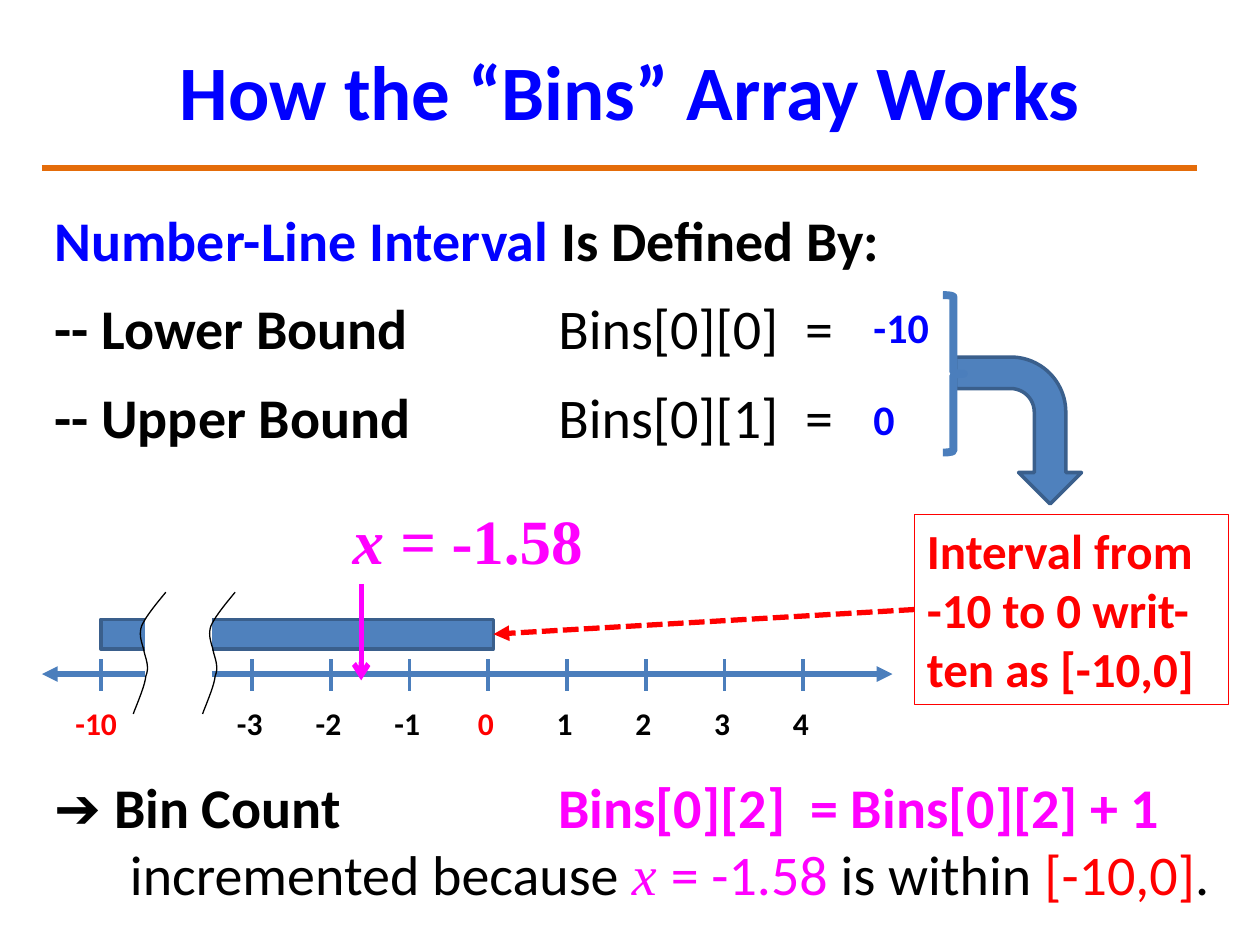
from lxml import etree
from pptx import Presentation
from pptx.dml.color import RGBColor
from pptx.enum.dml import MSO_LINE
from pptx.enum.shapes import MSO_CONNECTOR, MSO_SHAPE
from pptx.enum.text import MSO_ANCHOR, PP_ALIGN
from pptx.oxml.ns import qn
from pptx.util import Inches, Pt

STRAIGHT, DASH = MSO_CONNECTOR.STRAIGHT, MSO_LINE.SQUARE_DOT
RECT, BENT, BRACE = MSO_SHAPE.RECTANGLE, MSO_SHAPE.BENT_ARROW, MSO_SHAPE.RIGHT_BRACE
MIDDLE, TOP = MSO_ANCHOR.MIDDLE, MSO_ANCHOR.TOP
CENTER, LEFT = PP_ALIGN.CENTER, PP_ALIGN.LEFT
BLUE = RGBColor(0x00, 0x00, 0xFF)
RED = RGBColor(0xFF, 0x00, 0x00)
MAGENTA = RGBColor(0xFF, 0x00, 0xFF)
BLACK = RGBColor(0x00, 0x00, 0x00)
WHITE = RGBColor(0xFF, 0xFF, 0xFF)
ORANGE = RGBColor(0xE4, 0x6C, 0x0A)
STEEL = RGBColor(0x4F, 0x81, 0xBD)
STEEL_DARK = RGBColor(0x3A, 0x5F, 0x8C)
STEEL_LINE = RGBColor(0x4B, 0x7E, 0xBC)
SANS, SERIF = "Calibri", "Times New Roman"
COLS, ROWS = 120, 90


class Deck:
    """Draws styled elements on a slide divided into columns and rows."""

    def __init__(self, prs):
        self.slide = prs.slides.add_slide(prs.slide_layouts[6])
        self.shapes = self.slide.shapes
        self.col, self.row = prs.slide_width / COLS, prs.slide_height / ROWS

    def xy(self, x, y):
        return round(x * self.col), round(y * self.row)

    def put_text(self, sp, paragraphs, size, anchor=TOP, align=LEFT, before=0, tabs=()):
        tf = sp.text_frame
        tf.word_wrap, tf.vertical_anchor = True, anchor
        for i, runs in enumerate(paragraphs):
            p = tf.add_paragraph() if i else tf.paragraphs[0]
            p.alignment = align
            if i and before:
                p.space_before = Pt(before)
            if tabs:
                tab_list = etree.SubElement(p._p.get_or_add_pPr(), qn("a:tabLst"))
                for pos, kind in tabs:
                    etree.SubElement(tab_list, qn("a:tab"), pos=str(round(pos * self.col)), algn=kind)
            for text, color, bold, *serif in runs:
                r = p.add_run()
                r.text = text
                r.font.size, r.font.bold, r.font.color.rgb = Pt(size), bold, color
                r.font.name = SERIF if serif else SANS
                r.font.italic = "italic" in serif
        return tf

    def text(self, box, paragraphs, size, **style):
        sp = self.shapes.add_textbox(*self.xy(*box[:2]), *self.xy(*box[2:]))
        return self.put_text(sp, paragraphs, size, **style)

    def shape(self, kind, box, fill, color, width, rotation=0):
        sp = self.shapes.add_shape(kind, *self.xy(*box[:2]), *self.xy(*box[2:]))
        sp.rotation = rotation
        return self.paint(sp, fill, color, width)

    def paint(self, sp, fill, color, width):
        sp.shadow.inherit = False
        if fill is None:
            sp.fill.background()
        else:
            sp.fill.solid()
            sp.fill.fore_color.rgb = fill
        sp.line.color.rgb, sp.line.width = color, Pt(width)
        return sp

    def line(self, start, end, color, width, head=None, tail=None, dash=None):
        c = self.shapes.add_connector(STRAIGHT, *self.xy(*start), *self.xy(*end))
        c.line.color.rgb, c.line.width = color, Pt(width)
        if dash:
            c.line.dash_style = dash
        ln = c._element.spPr.find(qn("a:ln"))
        for tag, kind in (("a:headEnd", head), ("a:tailEnd", tail)):
            if kind:
                etree.SubElement(ln, qn(tag), type=kind)
        etree.SubElement(c._element.spPr, qn("a:effectLst"))
        return c

    def curve(self, origin, start, beziers, color, width, steps=10):
        points, p0 = [start], start
        for p1, p2, p3 in beziers:
            for t in (i / steps for i in range(1, steps + 1)):
                u = 1 - t
                points.append(tuple(u**3 * a + 3 * u * u * t * b + 3 * u * t * t * c + t**3 * d
                                    for a, b, c, d in zip(p0, p1, p2, p3)))
            p0 = p3
        points = [self.xy(origin[0] + x, origin[1] + y) for x, y in points]
        builder = self.shapes.build_freeform(*points[0])
        builder.add_line_segments(points[1:], close=False)
        return self.paint(builder.convert_to_shape(), None, color, width)


def main():
    prs = Presentation()
    prs.slide_width, prs.slide_height = Inches(10), Inches(7.5)
    s = Deck(prs)
    s.text((6, 1, 108, 15), [[("How the “Bins” Array Works", BLUE, True)]], 44,
           anchor=MIDDLE, align=CENTER)
    s.line((4, 16), (114, 16), ORANGE, 3)

    columns = [(48, "l"), (71.5, "l")]
    bounds = [[(f"-- {name} Bound", BLACK, True), (f"\tBins[0][{i}]\t=", BLACK, False)]
              for i, name in enumerate(("Lower", "Upper"))]
    s.text((4, 19, 110, 24.6),
           [[("Number-Line Interval ", BLUE, True), ("Is Defined By:", BLACK, True)], *bounds],
           32, before=12, tabs=columns)

    ticks = [24 + 7.5 * i for i in range(8)]
    labels = [("-10", RED, True)]
    labels += [(f"\t{n}", BLACK if n else RED, True) for n in range(-3, 5)]
    s.text((6, 66.5, 76, 4.8), [labels], 18, tabs=[(x - 7.4, "ctr") for x in ticks])
    s.line((4, 64.2), (85, 64.2), STEEL_LINE, 3, head="triangle", tail="triangle")
    for x in [9.6, *ticks]:
        s.line((x, 65.8), (x, 62.8), STEEL_LINE, 2.25)

    bar = s.shape(RECT, (9.6, 59, 37.4, 2.8), STEEL, STEEL_DARK, 2)
    callout = s.shape(RECT, (87.1, 49, 29.9, 18.1), None, RED, 0.75)
    s.put_text(callout, [[("Interval from -10 to 0 writ-ten as [-10,0]", RED, True)]], 28)
    pointer = s.line((87.1, 58), (47, 60.4), RED, 3, tail="triangle", dash=DASH)
    pointer.begin_connect(callout, 1)
    pointer.end_connect(bar, 3)

    s.text((82, 28.1, 22, 15), [[("-10", BLUE, True)], [("0", BLUE, True)]], 24, before=24)
    s.shape(BENT, (90, 35, 14, 12), STEEL, STEEL_DARK, 2, rotation=90)
    s.shape(BRACE, (89.8, 28.1, 2, 15), None, STEEL_LINE, 4.5)

    s.text((32.4, 47.2, 32, 8.5),
           [[("x = ", MAGENTA, True, "italic"), ("-1.58", MAGENTA, True, "upright")]], 36)
    s.line((34.4, 55.6), (34.4, 64.8), MAGENTA, 3, tail="arrow")

    tf = s.text((4, 73, 113, 14.2), [
        [("➔ Bin Count", BLACK, True), ("\tBins[0][2]\t= Bins[0][2] + 1", MAGENTA, True)],
        [("incremented because ", BLACK, False), ("x ", MAGENTA, False, "italic"),
         ("= -1.58 ", MAGENTA, False), ("is within ", BLACK, False),
         ("[-10,0]", RED, False), (".", BLACK, False)]], 32, tabs=[(48, "l"), (72, "l")])
    tf.paragraphs[1]._p.get_or_add_pPr().set("marL", str(round(7.2 * s.col)))

    s.shape(RECT, (14, 55.7, 6, 10.8), WHITE, WHITE, 2)
    wave = [((2.2, 1.1), (1.2, 2.3), (0.8, 3.2)), ((0.5, 4.1), (0.8, 4.7), (1, 5.5)),
            ((1.1, 6.2), (1.6, 7), (1.2, 8)), ((1.1, 9), (0.2, 11), (0, 11.6))]
    for x in (12.7, 19.3):
        s.curve((x, 56.4), (3.1, 0), wave, BLACK, 0.75)
    prs.save("out.pptx")


if __name__ == "__main__":
    main()
